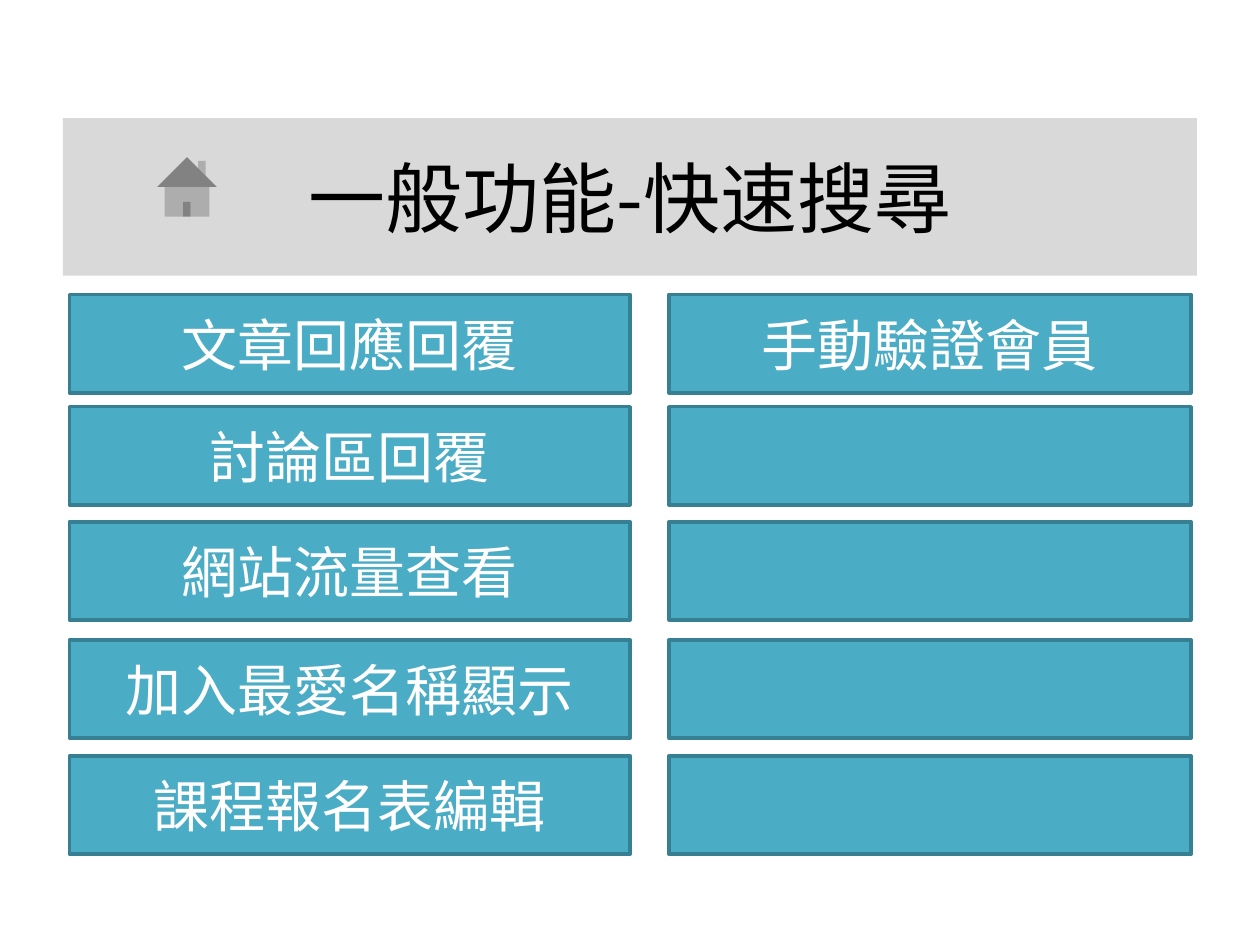
from lxml import etree
from pptx import Presentation
from pptx.dml.color import RGBColor
from pptx.enum.shapes import MSO_SHAPE
from pptx.enum.text import MSO_ANCHOR, PP_ALIGN
from pptx.oxml.ns import qn
from pptx.util import Cm, Pt

RECTANGLE = MSO_SHAPE.RECTANGLE
HOME_BUTTON = MSO_SHAPE.ACTION_BUTTON_HOME
MIDDLE = MSO_ANCHOR.MIDDLE
CENTER = PP_ALIGN.CENTER

FONT = "Noto Sans CJK SC"
COLORS = {
    "banner": "D9D9D9",
    "button": "4BACC6",
    "button_line": "377F92",
    "title_text": "000000",
    "button_text": "FFFFFF",
}

TITLE = "一般功能-快速搜尋"
# Each column: left, width (cm) and the labels from top to bottom
COLUMNS = [
    (1.4, 11.3, ["文章回應回覆", "討論區回覆", "網站流量查看",
                 "加入最愛名稱顯示", "課程報名表編輯"]),
    (13.49, 10.52, ["手動驗證會員", "", "", "", ""]),
]
ROW_TOPS = [5.94, 8.2, 10.52, 12.9, 15.24]
BUTTON_HEIGHT = 1.98


def color(name):
    return RGBColor.from_string(COLORS[name])


def add_filled_shape(slide, kind, box, fill, line=None):
    shape = slide.shapes.add_shape(kind, *(Cm(length) for length in box))
    shape.shadow.inherit = False
    shape.fill.solid()
    shape.fill.fore_color.rgb = color(fill)
    if line:
        shape.line.color.rgb = color(line)
        shape.line.width = Pt(2)
    else:
        shape.line.fill.background()
    return shape


def write_centered(shape, text, size, text_color):
    frame = shape.text_frame
    frame.text = text
    frame.word_wrap = True
    frame.vertical_anchor = MIDDLE
    paragraph = frame.paragraphs[0]
    paragraph.alignment = CENTER
    for run in paragraph.runs:
        run.font.size = Pt(size)
        run.font.color.rgb = color(text_color)
        run.font.name = FONT
        east_asian = etree.SubElement(run.font._element, qn("a:ea"))
        east_asian.set("typeface", FONT)


def main():
    presentation = Presentation()
    presentation.slide_width = Cm(25.4)
    presentation.slide_height = Cm(19.05)
    slide = presentation.slides.add_slide(presentation.slide_layouts[6])

    banner = add_filled_shape(slide, RECTANGLE, (1.27, 2.38, 22.86, 3.18), "banner")
    write_centered(banner, TITLE, 44, "title_text")

    for left, width, labels in COLUMNS:
        for top, label in zip(ROW_TOPS, labels):
            box = (left, top, width, BUTTON_HEIGHT)
            button = add_filled_shape(slide, RECTANGLE, box, "button", "button_line")
            if label:
                write_centered(button, label, 32, "button_text")

    add_filled_shape(slide, HOME_BUTTON, (2.97, 2.97, 1.6, 1.6), "banner")
    presentation.save("out.pptx")


if __name__ == "__main__":
    main()
